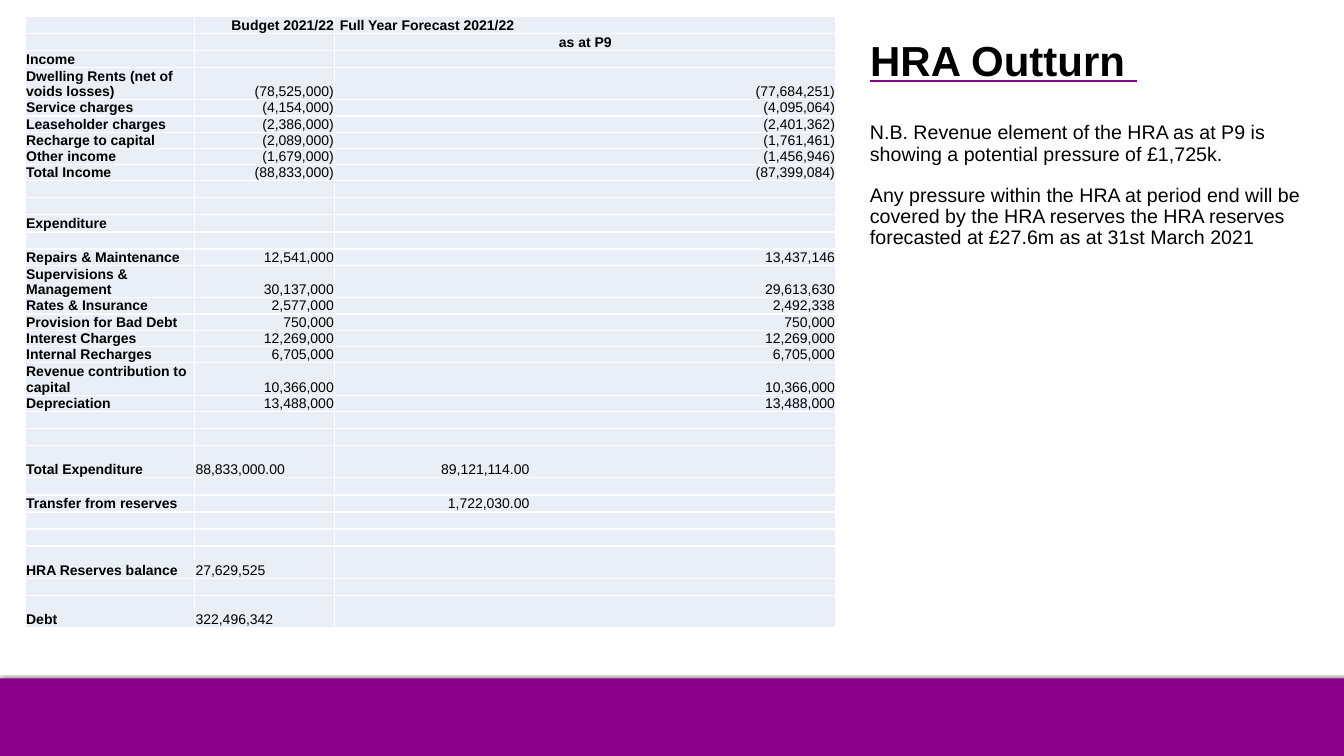
import dataclasses

import lxml.etree
import pptx
import pptx.util
from pptx.dml.color import RGBColor
from pptx.enum.shapes import MSO_SHAPE
from pptx.enum.text import MSO_ANCHOR, MSO_AUTO_SIZE, PP_ALIGN
from pptx.oxml.ns import qn
from pptx.util import Inches


@dataclasses.dataclass(frozen=True)
class Theme:
    font: str = "Arial"
    text: str = "000000"
    accent: str = "880088"
    cell: str = "EAEFF7"
    border: str = "FFFFFF"
    title_size: int = 30
    note_size: int = 14
    table_size: int = 10


THEME = Theme()
TITLE = "HRA Outturn "
NOTES = [
    "N.B. Revenue element of the HRA as at P9 is showing a potential pressure of £1,725k.",
    "Any pressure within the HRA at period end will be covered by the HRA reserves "
    "the HRA reserves forecasted at £27.6m as at 31st March 2021",
]
BLANK = ("", "", "")
ROWS = [
    ("", "Budget 2021/22", "Full Year Forecast 2021/22"),
    ("", "", "as at P9"),
    ("Income", "", ""),
    ("Dwelling Rents (net of voids losses)", "(78,525,000)", "(77,684,251)"),
    ("Service charges", "(4,154,000)", "(4,095,064)"),
    ("Leaseholder charges", "(2,386,000)", "(2,401,362)"),
    ("Recharge to capital", "(2,089,000)", "(1,761,461)"),
    ("Other income", "(1,679,000)", "(1,456,946)"),
    ("Total Income", "(88,833,000)", "(87,399,084)"),
    BLANK,
    BLANK,
    ("Expenditure", "", ""),
    BLANK,
    ("Repairs & Maintenance", "12,541,000", "13,437,146"),
    ("Supervisions & Management", "30,137,000", "29,613,630"),
    ("Rates & Insurance", "2,577,000", "2,492,338"),
    ("Provision for Bad Debt", "750,000", "750,000"),
    ("Interest Charges", "12,269,000", "12,269,000"),
    ("Internal Recharges", "6,705,000", "6,705,000"),
    ("Revenue contribution to capital", "10,366,000", "10,366,000"),
    ("Depreciation", "13,488,000", "13,488,000"),
    BLANK,
    BLANK,
    ("Total Expenditure", "88,833,000.00", "89,121,114.00"),
    BLANK,
    ("Transfer from reserves", "", "1,722,030.00"),
    BLANK,
    BLANK,
    ("HRA Reserves balance", "27,629,525", ""),
    BLANK,
    ("Debt", "322,496,342", ""),
]
TALL_ROWS = {3, 14, 19, 23, 28, 30}
HEADER_ROWS = 2
SUMMARY_START = 23
COLUMN_WIDTHS = [1.68, 1.39, 4.97]
TABLE_HEIGHT = 5.97
SUMMARY_RIGHT_MARGIN = 3.04


def add_colour(parent, colour):
    fill = lxml.etree.SubElement(parent, qn("a:solidFill"))
    return lxml.etree.SubElement(fill, qn("a:srgbClr"), val=colour)


def style_run(run, size, bold=False):
    run.font.size = pptx.util.Pt(size)
    run.font.bold = bold
    run.font.color.rgb = RGBColor.from_string(THEME.text)
    run.font.name = THEME.font


def add_band(slide):
    band = slide.shapes.add_shape(
        MSO_SHAPE.RECTANGLE, 0, Inches(6.73), Inches(13.33), Inches(0.77))
    band.fill.solid()
    band.fill.fore_color.rgb = RGBColor.from_string(THEME.accent)
    band.line.fill.background()
    band.shadow.inherit = False
    effects = band._element.spPr.find(qn("a:effectLst"))
    shadow = lxml.etree.SubElement(
        effects, qn("a:outerShdw"), blurRad="12700", dist="12700",
        dir="16200000", rotWithShape="0")
    colour = lxml.etree.SubElement(shadow, qn("a:srgbClr"), val=THEME.text)
    lxml.etree.SubElement(colour, qn("a:alpha"), val="50000")


def add_title(slide):
    title = slide.shapes.title
    title.left, title.top = Inches(8.53), Inches(0.16)
    title.width, title.height = Inches(4.22), Inches(0.92)
    frame = title.text_frame
    frame.text = TITLE
    frame.auto_size = MSO_AUTO_SIZE.NONE
    frame.vertical_anchor = MSO_ANCHOR.MIDDLE
    paragraph = frame.paragraphs[0]
    paragraph.alignment = PP_ALIGN.LEFT
    paragraph.line_spacing = 0.9
    run = paragraph.runs[0]
    style_run(run, THEME.title_size, True)
    run.font.underline = True
    underline = lxml.etree.Element(qn("a:uFill"))
    add_colour(underline, THEME.accent)
    run.font._element.find(qn("a:latin")).addprevious(underline)


def add_notes(slide):
    box = slide.shapes.add_textbox(Inches(8.53), Inches(1.22), Inches(4.7), Inches(1.3))
    frame = box.text_frame
    frame.word_wrap = True
    frame.margin_top = frame.margin_bottom = 0
    frame.text = "\n".join(NOTES)
    for index, paragraph in enumerate(frame.paragraphs):
        paragraph.line_spacing = 0.9
        paragraph.space_before = pptx.util.Pt(14.5 if index else 0)
        style_run(paragraph.runs[0], THEME.note_size)


def fill_cell(cell, text, row, column):
    cell.margin_left = cell.margin_right = Inches(0.01)
    cell.margin_top = cell.margin_bottom = 0
    cell.vertical_anchor = MSO_ANCHOR.BOTTOM
    properties = cell._tc.get_or_add_tcPr()
    for side in ("lnL", "lnR", "lnT", "lnB"):
        add_colour(lxml.etree.SubElement(properties, qn(f"a:{side}"), w="12700"), THEME.border)
    cell.fill.solid()
    cell.fill.fore_color.rgb = RGBColor.from_string(THEME.cell)
    paragraph = cell.text_frame.paragraphs[0]
    if not text:
        lxml.etree.SubElement(
            paragraph._p, qn("a:endParaRPr"), sz=str(THEME.table_size * 100))
        return
    paragraph.text = text
    style_run(paragraph.runs[0], THEME.table_size, column == 0 or row < HEADER_ROWS)
    if row == 0 and column == 2:
        cell.margin_left = Inches(0.05)
    elif row == 1:
        paragraph.alignment = PP_ALIGN.CENTER
    elif column and row < SUMMARY_START:
        paragraph.alignment = PP_ALIGN.RIGHT
    elif column == 2:
        paragraph.alignment = PP_ALIGN.RIGHT
        cell.margin_right = Inches(SUMMARY_RIGHT_MARGIN)


def add_budget_table(slide):
    table = slide.shapes.add_table(
        len(ROWS), len(COLUMN_WIDTHS), Inches(0.25), Inches(0.16),
        Inches(sum(COLUMN_WIDTHS)), Inches(TABLE_HEIGHT)).table
    table.first_row = table.horz_banding = False
    for column, width in zip(table.columns, COLUMN_WIDTHS):
        column.width = Inches(width)
    line_height = TABLE_HEIGHT / (len(ROWS) + len(TALL_ROWS))
    for row, values in enumerate(ROWS):
        table.rows[row].height = Inches(line_height * (2 if row in TALL_ROWS else 1))
        for column, text in enumerate(values):
            fill_cell(table.cell(row, column), text, row, column)


def main():
    presentation = pptx.Presentation()
    presentation.slide_width = Inches(13.33)
    presentation.slide_height = Inches(7.5)
    slide = presentation.slides.add_slide(presentation.slide_layouts[5])
    add_band(slide)
    add_budget_table(slide)
    add_notes(slide)
    add_title(slide)
    presentation.save("out.pptx")


if __name__ == "__main__":
    main()
